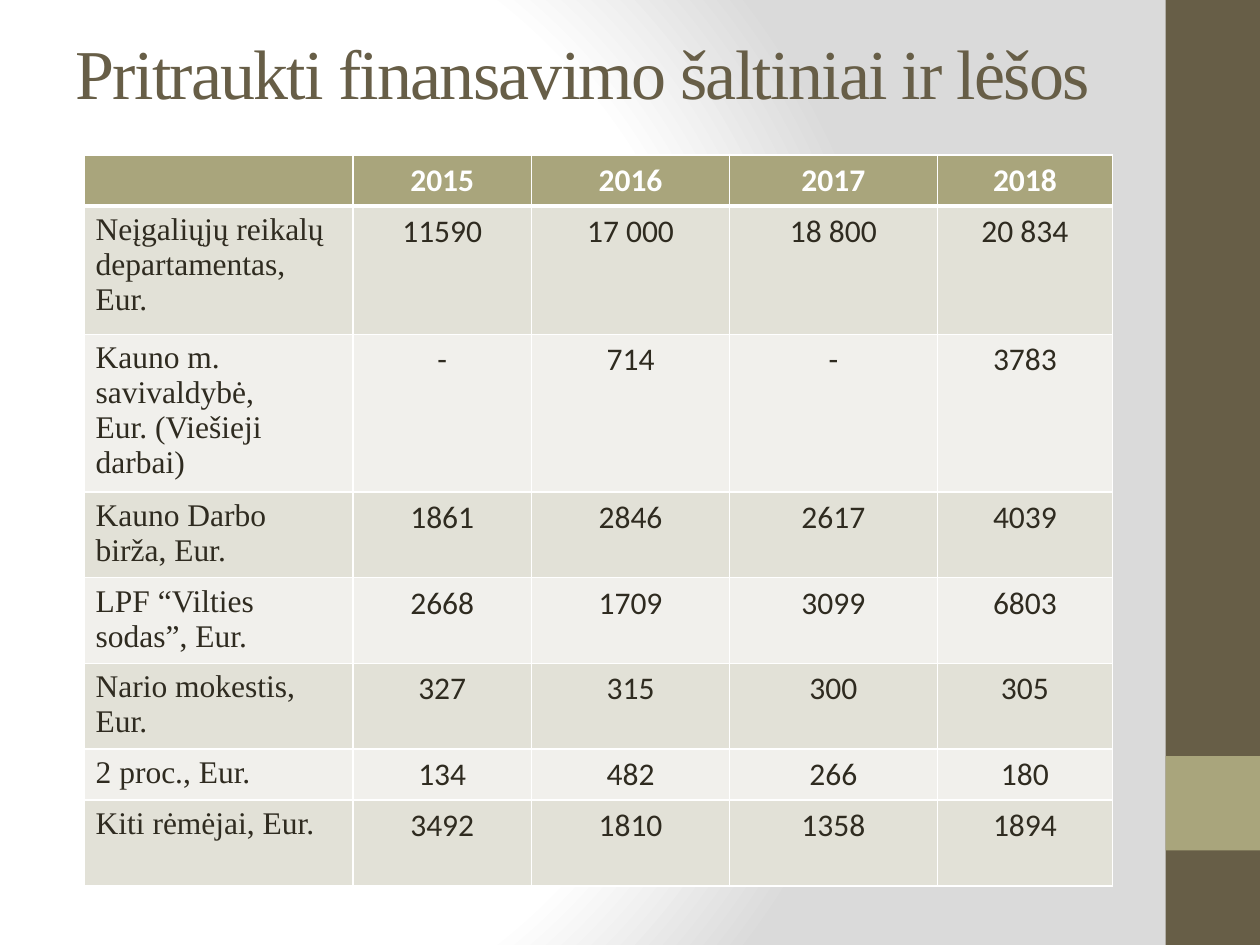
from dataclasses import dataclass

from pptx import Presentation
from pptx.dml.color import RGBColor
from pptx.enum.shapes import MSO_SHAPE
from pptx.enum.text import MSO_ANCHOR, MSO_AUTO_SIZE, PP_ALIGN
from pptx.oxml import parse_xml
from pptx.oxml.ns import nsdecls
from pptx.util import Inches, Pt

RECT = MSO_SHAPE.RECTANGLE
LEFT, CENTER = PP_ALIGN.LEFT, PP_ALIGN.CENTER
MIDDLE = MSO_ANCHOR.MIDDLE
NO_FIT = MSO_AUTO_SIZE.NONE


@dataclass(frozen=True)
class Theme:
    white: str = "FFFFFF"
    gray: str = "DADADA"
    brown: str = "675E47"
    olive: str = "A9A57C"
    ink: str = "2F2B20"
    bands: tuple = ("E2E1D7", "F1F0EC")
    serif: str = "Times New Roman"
    sans: str = "Calibri"
    title: int = 40
    body: int = 18


@dataclass(frozen=True)
class Bar:
    top: float
    height: float
    color: str


@dataclass(frozen=True)
class Row:
    label: str
    sums: tuple
    height: float


THEME = Theme()
BARS = (Bar(0, 7.5, THEME.brown), Bar(6, 0.75, THEME.olive))
WIDTHS = (2.13, 1.42, 1.57, 1.65, 1.39)
ROWS = (
    Row("", ("2015", "2016", "2017", "2018"), 0.39),
    Row("Neįgaliųjų reikalų departamentas, Eur.",
        ("11590", "17 000", "18 800", "20 834"), 1.02),
    Row("Kauno m. savivaldybė,\nEur. (Viešieji darbai)",
        ("-", "714", "-", "3783"), 1.25),
    Row("Kauno Darbo birža, Eur.", ("1861", "2846", "2617", "4039"), 0.68),
    Row("LPF “Vilties sodas”, Eur.", ("2668", "1709", "3099", "6803"), 0.68),
    Row("Nario mokestis, Eur.", ("327", "315", "300", "305"), 0.68),
    Row("2 proc., Eur.", ("134", "482", "266", "180"), 0.39),
    Row("Kiti rėmėjai, Eur.", ("3492", "1810", "1358", "1894"), 0.68),
)


def style(font, name: str, size: int, color: str, bold: bool = False) -> None:
    font.name, font.size, font.bold = name, Pt(size), bold
    font.color.rgb = RGBColor.from_string(color)


def paint_back(slide) -> None:
    """Fill the background with a circular gradient centred at the left."""
    stops = ((0, THEME.white), (75, THEME.white), (100, THEME.gray))
    marks = "".join(
        f'<a:gs pos="{pos * 1000}"><a:srgbClr val="{color}"/></a:gs>'
        for pos, color in stops)
    slide.background.fill.solid()
    solid = slide.background.fill._xPr[0]
    solid.getparent().replace(solid, parse_xml(
        f'<a:gradFill {nsdecls("a")} rotWithShape="1"><a:gsLst>{marks}</a:gsLst>'
        '<a:path path="circle"><a:fillToRect l="20000" t="50000" '
        'r="100000" b="50000"/></a:path></a:gradFill>'))


def draw_bar(slide, bar: Bar) -> None:
    shape = slide.shapes.add_shape(
        RECT, Inches(9.25), Inches(bar.top), Inches(0.75), Inches(bar.height))
    shape.shadow.inherit = False
    shape.fill.solid()
    shape.fill.fore_color.rgb = RGBColor.from_string(bar.color)
    shape.line.fill.background()


def write_title(slide, text: str) -> None:
    title = slide.shapes.title
    title.left, title.top = Inches(0.5), Inches(0.13)
    title.width, title.height = Inches(8.28), Inches(0.87)
    frame = title.text_frame
    frame.text = text
    frame.word_wrap, frame.auto_size = True, NO_FIT
    frame.vertical_anchor = MIDDLE
    line = frame.paragraphs[0]
    line.alignment = LEFT
    for run in line.runs:
        style(run.font, THEME.serif, THEME.title, THEME.brown)
        run.font._element.set("spc", "-100")


def edge_cell(cell, base: int) -> None:
    """Draw white borders; base is the width of the bottom one in points."""
    props = cell._tc.get_or_add_tcPr()
    for spot, side in enumerate("LRTB"):
        width = Pt(base if side == "B" else 1)
        props.insert(spot, parse_xml(
            f'<a:ln{side} {nsdecls("a")} w="{width}"><a:solidFill>'
            f'<a:srgbClr val="{THEME.white}"/></a:solidFill></a:ln{side}>'))


def fill_cell(cell, text: str, row: int, col: int) -> None:
    head = row == 0
    fill = THEME.olive if head else THEME.bands[(row - 1) % 2]
    cell.fill.solid()
    cell.fill.fore_color.rgb = RGBColor.from_string(fill)
    cell.margin_left = cell.margin_right = Inches(0.09)
    cell.margin_top = cell.margin_bottom = Inches(0.05)
    edge_cell(cell, 3 if head else 1)
    cell.text_frame.text = text
    for line in cell.text_frame.paragraphs:
        line.alignment = CENTER if col else LEFT
        style(line.font, THEME.sans if col else THEME.serif, THEME.body,
              THEME.white if head else THEME.ink, head)
        for run in line.runs:
            style(run.font, THEME.sans if col else THEME.serif, THEME.body,
                  THEME.white if head else THEME.ink, head)


def draw_table(slide) -> None:
    table = slide.shapes.add_table(
        len(ROWS), len(WIDTHS), Inches(0.67), Inches(1.23),
        Inches(sum(WIDTHS)), Inches(sum(row.height for row in ROWS))).table
    for col, width in zip(table.columns, WIDTHS):
        col.width = Inches(width)
    for r, row in enumerate(ROWS):
        table.rows[r].height = Inches(row.height)
        for c, text in enumerate((row.label, *row.sums)):
            fill_cell(table.cell(r, c), text, r, c)


def main() -> None:
    deck = Presentation()
    deck.slide_width, deck.slide_height = Inches(10), Inches(7.5)
    slide = deck.slides.add_slide(deck.slide_layouts[5])
    paint_back(slide)
    for bar in BARS:
        draw_bar(slide, bar)
    draw_table(slide)
    write_title(slide, "Pritraukti finansavimo šaltiniai ir lėšos")
    deck.save("out.pptx")


if __name__ == "__main__":
    main()
